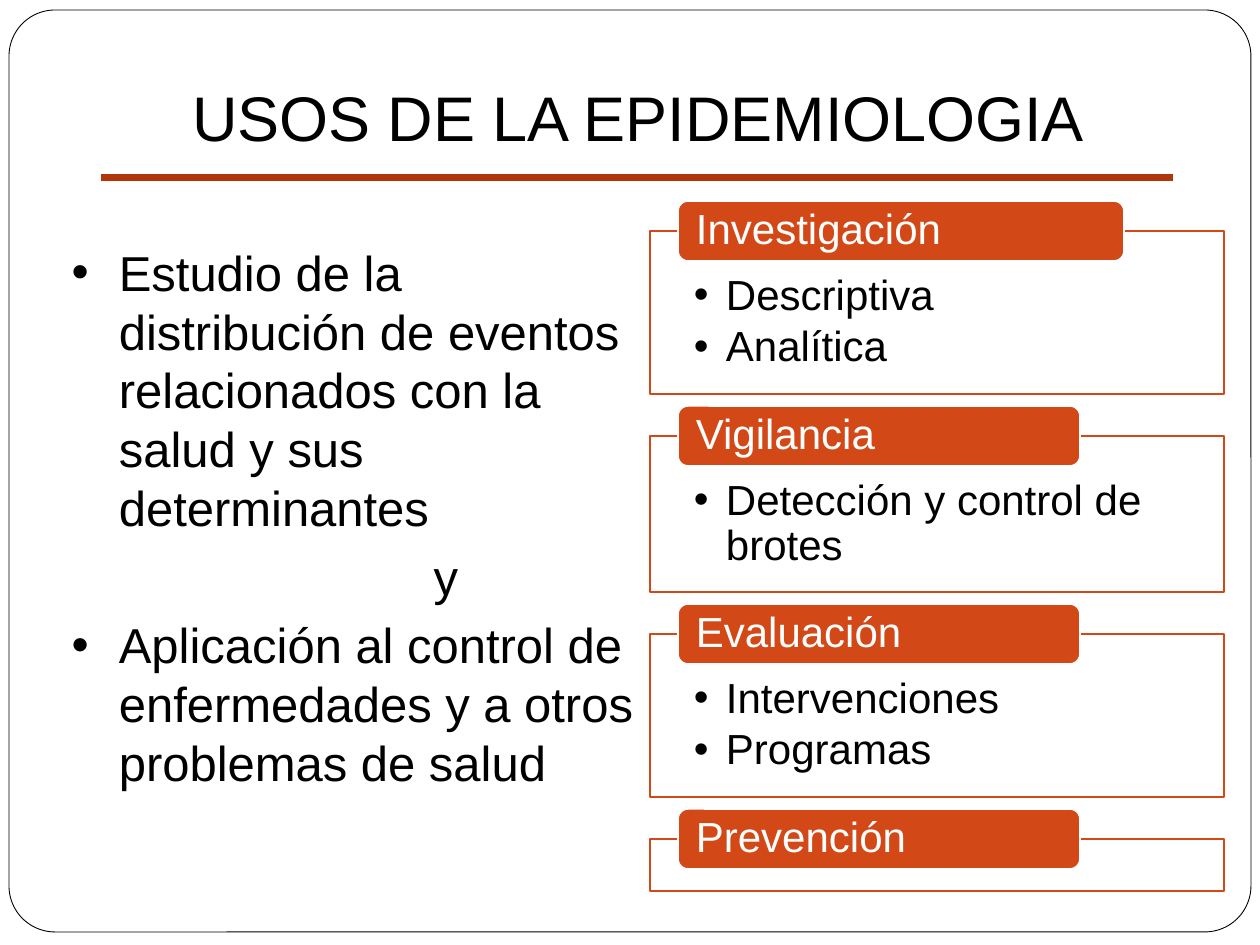
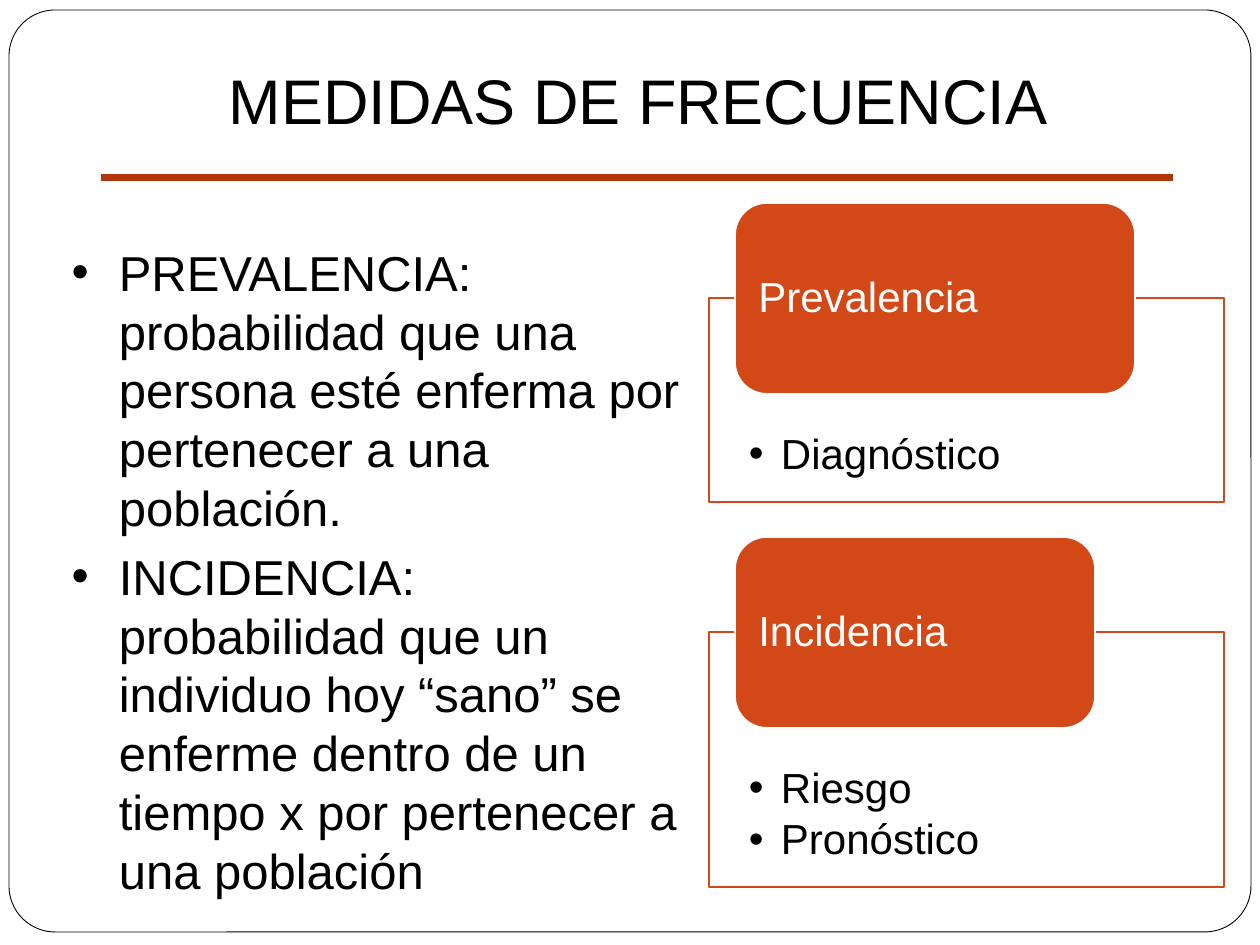
from dataclasses import dataclass
from typing import Any, NamedTuple

from lxml import etree
from pptx import Presentation
from pptx.dml.color import RGBColor
from pptx.enum.shapes import MSO_CONNECTOR, MSO_SHAPE
from pptx.enum.text import MSO_ANCHOR, MSO_AUTO_SIZE, PP_ALIGN
from pptx.oxml.ns import qn
from pptx.util import Emu, Pt

RECT, ROUND = MSO_SHAPE.RECTANGLE, MSO_SHAPE.ROUNDED_RECTANGLE
STRAIGHT = MSO_CONNECTOR.STRAIGHT
TOP, MIDDLE = MSO_ANCHOR.TOP, MSO_ANCHOR.MIDDLE
LEFT, CENTER = PP_ALIGN.LEFT, PP_ALIGN.CENTER
FIXED = MSO_AUTO_SIZE.NONE
SCALE = 914400 / 126


@dataclass(frozen=True)
class Theme:
    font: str = "Arial"
    black: RGBColor = RGBColor(0x00, 0x00, 0x00)
    white: RGBColor = RGBColor(0xFF, 0xFF, 0xFF)
    orange: RGBColor = RGBColor(0xD3, 0x48, 0x17)
    rust: RGBColor = RGBColor(0xB1, 0x36, 0x0B)
    title: float = 36
    body: float = 28
    panel: float = 24


class Box(NamedTuple):
    left: int
    top: int
    width: int
    height: int


class Item(NamedTuple):
    text: str
    indent: int = 0


class Panel(NamedTuple):
    title: str
    width: int
    height: int
    items: tuple[str, ...] = ()


class Stack(NamedTuple):
    left: int
    top: int
    width: int
    gap: int
    shift: int
    tab: int
    pad: int
    inset: Box
    panels: tuple[Panel, ...]


class Page(NamedTuple):
    title: str
    head: Box
    body: Box
    items: tuple[Item, ...]
    stack: Stack


THEME = Theme()
FRAME = Box(9, 10, 1242, 922)
RULE = Box(101, 178, 1072, 0)

PAGES = (
    Page(
        "USOS DE LA EPIDEMIOLOGIA",
        Box(103, 55, 1071, 122),
        Box(59, 236, 610, 640),
        (
            Item("Estudio de la distribución de eventos relacionados con la salud y sus determinantes"),
            Item("y", 362),
            Item("Aplicación al control de enfermedades y a otros problemas de salud"),
        ),
        Stack(
            650, 231, 574, 42, 28, 60, 15, Box(44, 43, 44, 24),
            (
                Panel("Investigación", 446, 163, ("Descriptiva", "Analítica")),
                Panel("Vigilancia", 402, 156, ("Detección y control de brotes",)),
                Panel("Evaluación", 402, 163, ("Intervenciones", "Programas")),
                Panel("Prevención", 402, 52),
            ),
        ),
    ),
    Page(
        "MEDIDAS DE FRECUENCIA",
        Box(103, 20, 1071, 158),
        Box(59, 236, 640, 640),
        (
            Item("PREVALENCIA: probabilidad que una persona esté enferma por pertenecer a una población."),
            Item("INCIDENCIA: probabilidad que un individuo hoy “sano” se enferme dentro de un tiempo x por pertenecer a una población"),
        ),
        Stack(
            709, 298, 515, 130, 26, 191, 14, Box(40, 135, 40, 24),
            (
                Panel("Prevalencia", 400, 204, ("Diagnóstico",)),
                Panel("Incidencia", 360, 255, ("Riesgo", "Pronóstico")),
            ),
        ),
    ),
)


def px(value: float) -> Emu:
    return Emu(round(value * SCALE))


def apply(target: Any, values: dict[str, Any]) -> None:
    for name, value in values.items():
        setattr(target, name, value)


def place(shape: Any, box: Box) -> None:
    apply(shape, {name: px(value) for name, value in box._asdict().items()})


def style(para: Any, size: float, color: RGBColor) -> None:
    apply(para.font, {"name": THEME.font, "size": Pt(size)})
    para.font.color.rgb = color


def indent(para: Any, left: int, first: int, mark: str = "") -> None:
    props = para._p.get_or_add_pPr()
    props.set("marL", str(px(left)))
    props.set("indent", str(px(first)))
    if mark:
        etree.SubElement(props, qn("a:buFont")).set("typeface", THEME.font)
        etree.SubElement(props, qn("a:buChar")).set("char", mark)
    else:
        etree.SubElement(props, qn("a:buNone"))


def block(slide: Any, kind: Any, box: Box, fill: RGBColor, line: RGBColor, width: float) -> Any:
    shape = slide.shapes.add_shape(kind, *map(px, box))
    shape.shadow.inherit = False
    shape.fill.solid()
    shape.fill.fore_color.rgb = fill
    shape.line.color.rgb = line
    shape.line.width = Pt(width)
    return shape


def margins(frame: Any, inset: Box) -> None:
    names = ("margin_left", "margin_top", "margin_right", "margin_bottom")
    apply(frame, {name: px(value) for name, value in zip(names, inset)})


def write(shape: Any, lines: tuple[str, ...], color: RGBColor, inset: Box,
          anchor: Any, after: float, mark: str = "") -> None:
    frame = shape.text_frame
    apply(frame, {"word_wrap": True, "vertical_anchor": anchor})
    margins(frame, inset)
    frame.text = "\n".join(lines)
    for para in frame.paragraphs:
        apply(para, {"alignment": LEFT, "line_spacing": 0.9, "space_after": Pt(after)})
        style(para, THEME.panel, color)
        if mark:
            indent(para, 32, -32, mark)


def draw_stack(slide: Any, stack: Stack) -> None:
    top = stack.top
    for panel in stack.panels:
        card = block(slide, RECT, Box(stack.left, top, stack.width, panel.height),
                     THEME.white, THEME.orange, 1)
        tint = card.element.spPr.find(qn("a:solidFill"))[0]
        etree.SubElement(tint, qn("a:alpha")).set("val", "90000")
        if panel.items:
            write(card, panel.items, THEME.black, stack.inset, TOP, 3.6, "•")
        spot = Box(stack.left + stack.shift, top - stack.tab // 2, panel.width, stack.tab)
        tab = block(slide, ROUND, spot, THEME.orange, THEME.white, 1)
        write(tab, (panel.title,), THEME.white, Box(stack.pad, 0, stack.pad, 0), MIDDLE, 8.4)
        top += panel.height + stack.gap


def draw_master(master: Any, slide: Any) -> None:
    frame = block(slide, ROUND, FRAME, THEME.white, THEME.black, 0.5)
    frame.adjustments[0] = 0.05
    ends = (RULE.left, RULE.top, RULE.left + RULE.width, RULE.top)
    rule = slide.shapes.add_connector(STRAIGHT, *map(px, ends))
    rule.line.color.rgb = THEME.rust
    rule.line.width = Pt(4)
    etree.SubElement(rule.element.spPr, qn("a:effectLst"))
    for index, shape in enumerate((frame, rule), start=2):
        master.shapes.element.insert(index, shape.element)


def draw_page(slide: Any, page: Page) -> None:
    title, body = slide.shapes.title, slide.placeholders[1]
    place(title, page.head)
    place(body, page.body)
    title.text_frame.text = page.title
    apply(title.text_frame, {"auto_size": FIXED, "vertical_anchor": MIDDLE})
    head = title.text_frame.paragraphs[0]
    head.alignment = CENTER
    style(head, THEME.title, THEME.black)
    body.text_frame.text = "\n".join(item.text for item in page.items)
    body.text_frame.auto_size = FIXED
    for para, item in zip(body.text_frame.paragraphs, page.items):
        style(para, THEME.body, THEME.black)
        if item.indent:
            indent(para, item.indent, 0)
    draw_stack(slide, page.stack)


def main() -> None:
    deck = Presentation()
    apply(deck, {"slide_width": px(1260), "slide_height": px(945)})
    slides = [deck.slides.add_slide(deck.slide_layouts[1]) for _ in PAGES]
    draw_master(deck.slide_master, slides[0])
    for slide, page in zip(slides, PAGES):
        draw_page(slide, page)
    deck.save("out.pptx")


if __name__ == "__main__":
    main()
